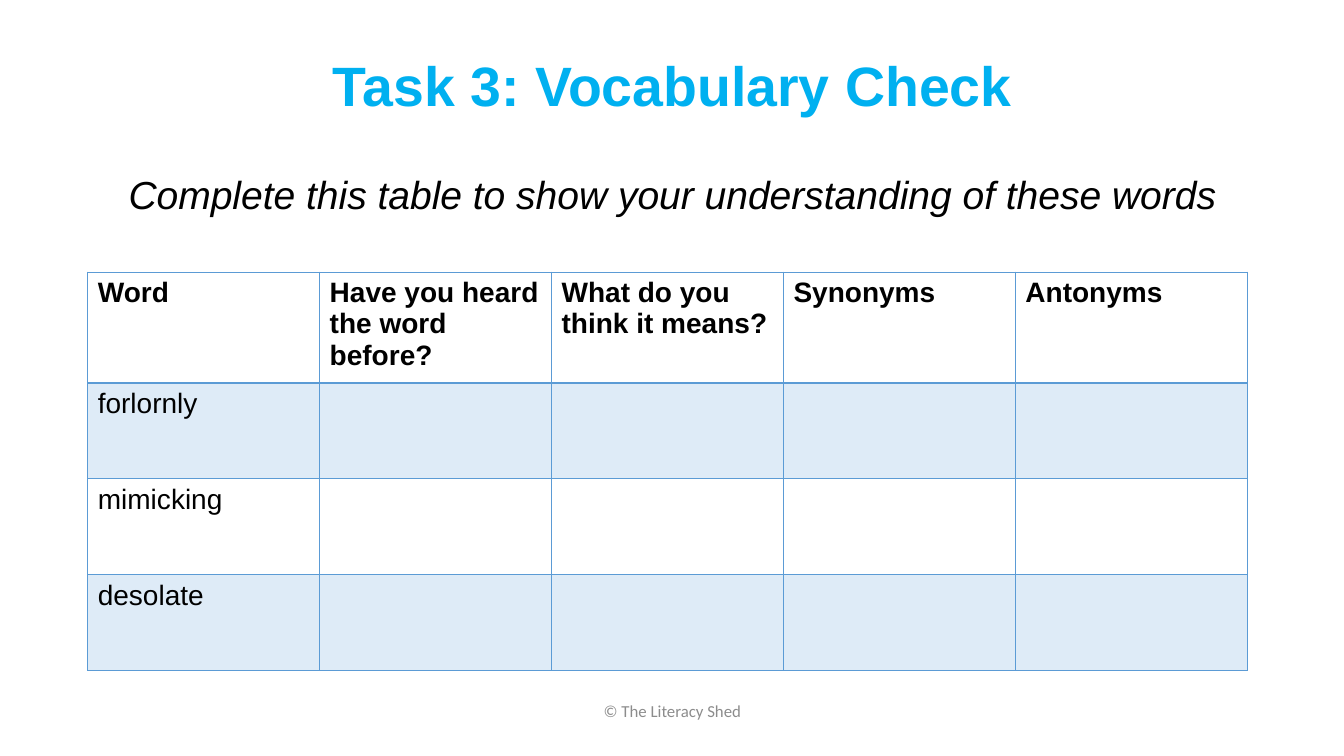
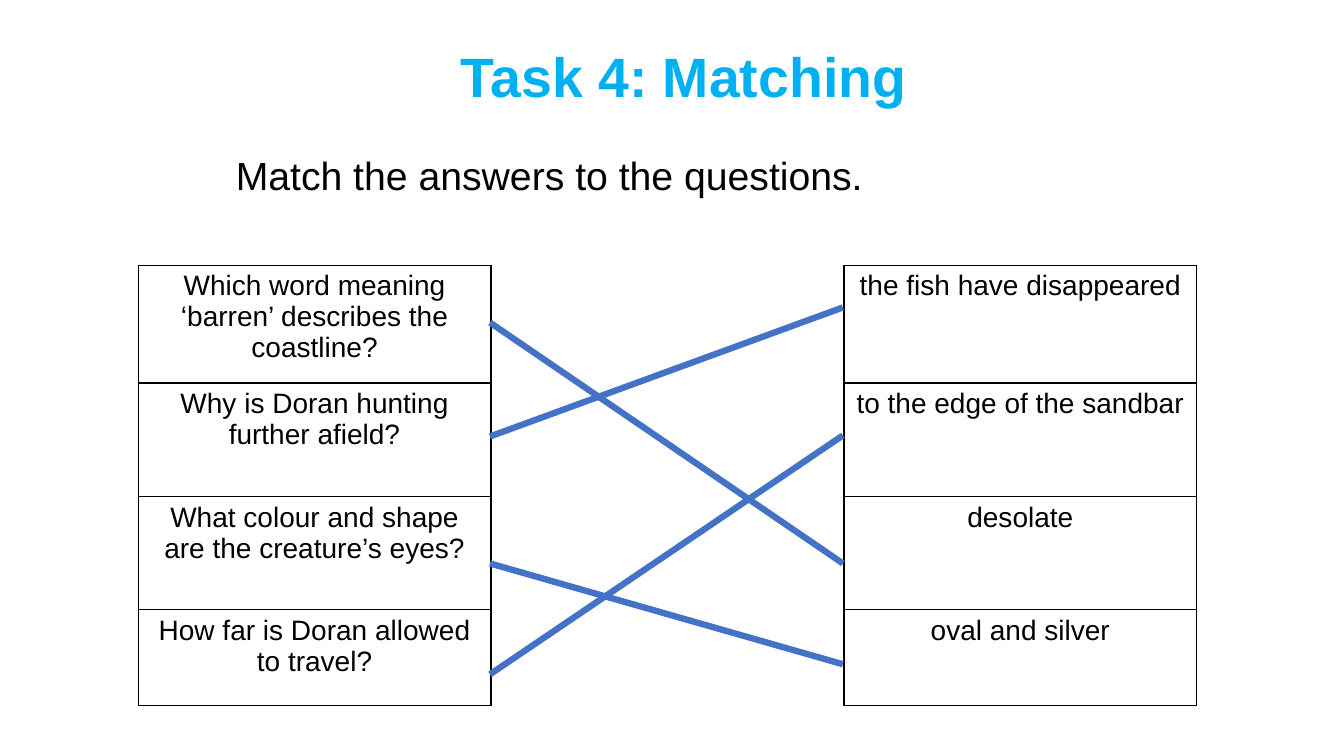
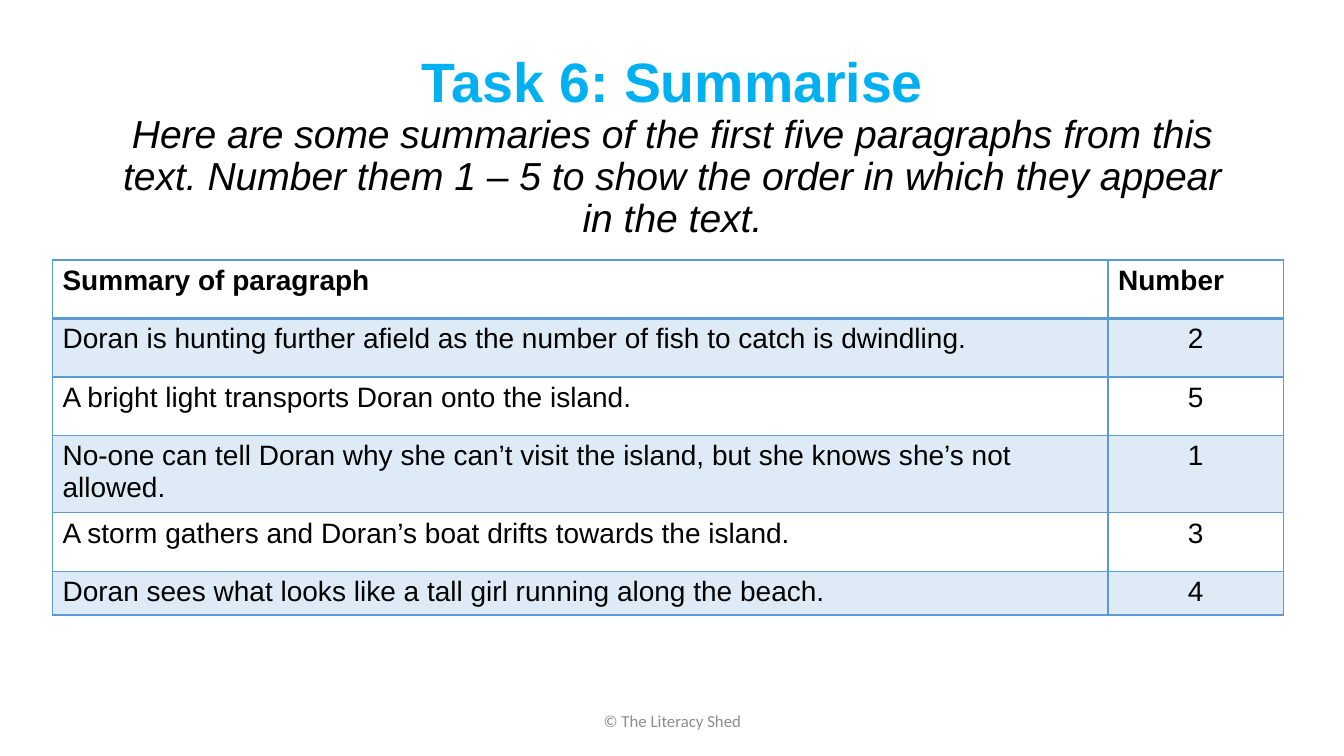
from lxml import etree
from pptx import Presentation
from pptx.dml.color import RGBColor
from pptx.enum import shapes, text
from pptx.oxml import ns
from pptx.util import Inches, Pt

hex_colour = RGBColor.from_string
LEFT, CENTRE = text.PP_ALIGN.LEFT, text.PP_ALIGN.CENTER
BLACK, BLUE, PALE_BLUE, LINK_BLUE = "000000", "5B9BD5", "DEEBF7", "4472C4"

# Text styles: font, size, colour, bold, italic, alignment, line spacing
STYLES = {
    "title": ("Arial", 39.6, "00B0F0", True, False, CENTRE, 0.9),
    "instruction": ("Arial", 27.9, BLACK, False, True, CENTRE, 0.9),
    "plain instruction": ("Arial", 28, BLACK, False, False, LEFT, 1.0),
    "footer": ("Calibri", 12, "8C8C8C", False, False, CENTRE, 1.0),
    "header": ("Arial", 20, BLACK, True, False, LEFT, 1.0),
    "cell": ("Arial", 20, BLACK, False, False, LEFT, 1.0),
    "centred cell": ("Arial", 20, BLACK, False, False, CENTRE, 1.0),
}
FOOTER = "© The Literacy Shed"


def write(paragraph, words, style):
    name, size, colour, bold, italic, alignment, spacing = STYLES[style]
    paragraph.alignment = alignment
    paragraph.line_spacing = spacing
    run = paragraph.add_run()
    run.text = words
    run.font.name = name
    run.font.size = Pt(size)
    run.font.bold = bold
    run.font.italic = italic
    run.font.color.rgb = hex_colour(colour)


def add_table(slide, left, top, widths, heights, rows, style_at, border_at, fill_at):
    """The three rules give a cell's style, border (colour, width) and fill."""
    table = slide.shapes.add_table(
        len(rows), len(widths), Inches(left), Inches(top),
        Inches(sum(widths)), Inches(sum(heights))).table
    table.first_row = table.horz_banding = False
    for column, width in zip(table.columns, widths):
        column.width = Inches(width)
    for row, height in zip(table.rows, heights):
        row.height = Inches(height)
    for r, row in enumerate(rows):
        for c, words in enumerate(row):
            cell = table.cell(r, c)
            if words:
                write(cell.text_frame.paragraphs[0], words, style_at(r, c))
            properties = cell._tc.get_or_add_tcPr()
            for side in "LRTB":
                border = border_at(r, c, side)
                line = etree.SubElement(properties, ns.qn(f"a:ln{side}"))
                if border:
                    line.set("w", str(Pt(border[1])))
                    fill = etree.SubElement(line, ns.qn("a:solidFill"))
                    etree.SubElement(fill, ns.qn("a:srgbClr"), val=border[0])
                else:
                    etree.SubElement(line, ns.qn("a:noFill"))
            colour = fill_at(r, c)
            if colour:
                cell.fill.solid()
                cell.fill.fore_color.rgb = hex_colour(colour)
            else:
                cell.fill.background()


presentation = Presentation()
presentation.slide_width = Inches(13.33)
presentation.slide_height = Inches(7.5)
vocabulary, matching, summarise = [
    presentation.slides.add_slide(presentation.slide_layouts[6]) for _ in range(3)]

# Titles, instructions and footers: slide, box, paragraphs (words, style, space before)
text_boxes = [
    (vocabulary, (0.92, 0.65, 11.5, 1.45), [
        ("Task 3: Vocabulary Check", "title", 0),
        ("Complete this table to show your understanding of these words",
         "instruction", 41)]),
    (vocabulary, (4.42, 6.85, 4.5, 0.4), [(FOOTER, "footer", 0)]),
    (matching, (1.03, 0.35, 11.5, 0.87), [("Task 4: Matching", "title", 0)]),
    (matching, (2.24, 1.45, 10, 0.57), [
        ("Match the answers to the questions.", "plain instruction", 0)]),
    (summarise, (0.92, 0.74, 11.5, 1.45), [
        ("Task 6: Summarise", "title", 0),
        ("Here are some summaries of the first five paragraphs from this text. "
         "Number them 1 – 5 to show the order in which they appear in the text.",
         "instruction", 0)]),
    (summarise, (4.42, 6.95, 4.5, 0.4), [(FOOTER, "footer", 0)]),
]
for slide, box, paragraphs in text_boxes:
    frame = slide.shapes.add_textbox(*map(Inches, box)).text_frame
    frame.word_wrap = True
    frame.vertical_anchor = text.MSO_ANCHOR.MIDDLE
    for index, (words, style, space) in enumerate(paragraphs):
        paragraph = frame.add_paragraph() if index else frame.paragraphs[0]
        if space:
            paragraph.space_before = Pt(space)
        write(paragraph, words, style)

# Banded tables: slide, left, top, column widths, row heights, rows
banded_tables = [
    (vocabulary, 0.87, 2.7, [2.3] * 5, [1.03] + [0.95] * 3, [
        ["Word", "Have you heard the word before?", "What do you think it means?",
         "Synonyms", "Antonyms"],
        *[[word] + [""] * 4 for word in ("forlornly", "mimicking", "desolate")]]),
    (summarise, 0.52, 2.58, [10.47, 1.74], [0.58, 0.58, 0.58, 0.72, 0.58, 0.42], [
        ["Summary of paragraph", "Number"],
        ["Doran is hunting further afield as the number of fish to catch is dwindling.",
         "2"],
        ["A bright light transports Doran onto the island.", "5"],
        ["No-one can tell Doran why she can’t visit the island, "
         "but she knows she’s not allowed.", "1"],
        ["A storm gathers and Doran’s boat drifts towards the island.", "3"],
        ["Doran sees what looks like a tall girl running along the beach.", "4"]]),
]
for banded_table in banded_tables:
    add_table(
        *banded_table,
        style_at=lambda r, c: "header" if r == 0 else "centred cell" if c else "cell",
        border_at=lambda r, c, side: (BLUE, 2 if (r, side) in [(0, "B"), (1, "T")] else 1),
        fill_at=lambda r, c: PALE_BLUE if r % 2 else None)

# Questions and answers, with an open column between them
add_table(
    matching, 1.37, 2.63, [3.5] * 3, [1.17, 1.13, 1.12, 0.95], [
        ["Which word meaning ‘barren’ describes the coastline?", "",
         "the fish have disappeared"],
        ["Why is Doran hunting further afield?", "", "to the edge of the sandbar"],
        ["What colour and shape are the creature’s eyes?", "", "desolate"],
        ["How far is Doran allowed to travel?", "", "oval and silver"]],
    style_at=lambda r, c: "centred cell",
    border_at=lambda r, c, side: None if c == 1 and side in "TB" else (BLACK, 1),
    fill_at=lambda r, c: None)

# Lines from each question to its answer
for question_y, answer_y in [(3.2, 5.59), (4.33, 3.05), (5.59, 6.59), (6.69, 4.32)]:
    connector = matching.shapes.add_connector(
        shapes.MSO_CONNECTOR.STRAIGHT,
        Inches(4.86), Inches(question_y), Inches(8.36), Inches(answer_y))
    connector.line.color.rgb = hex_colour(LINK_BLUE)
    connector.line.width = Pt(4.5)
    etree.SubElement(connector._element.spPr, ns.qn("a:effectLst"))

presentation.save("out.pptx")
